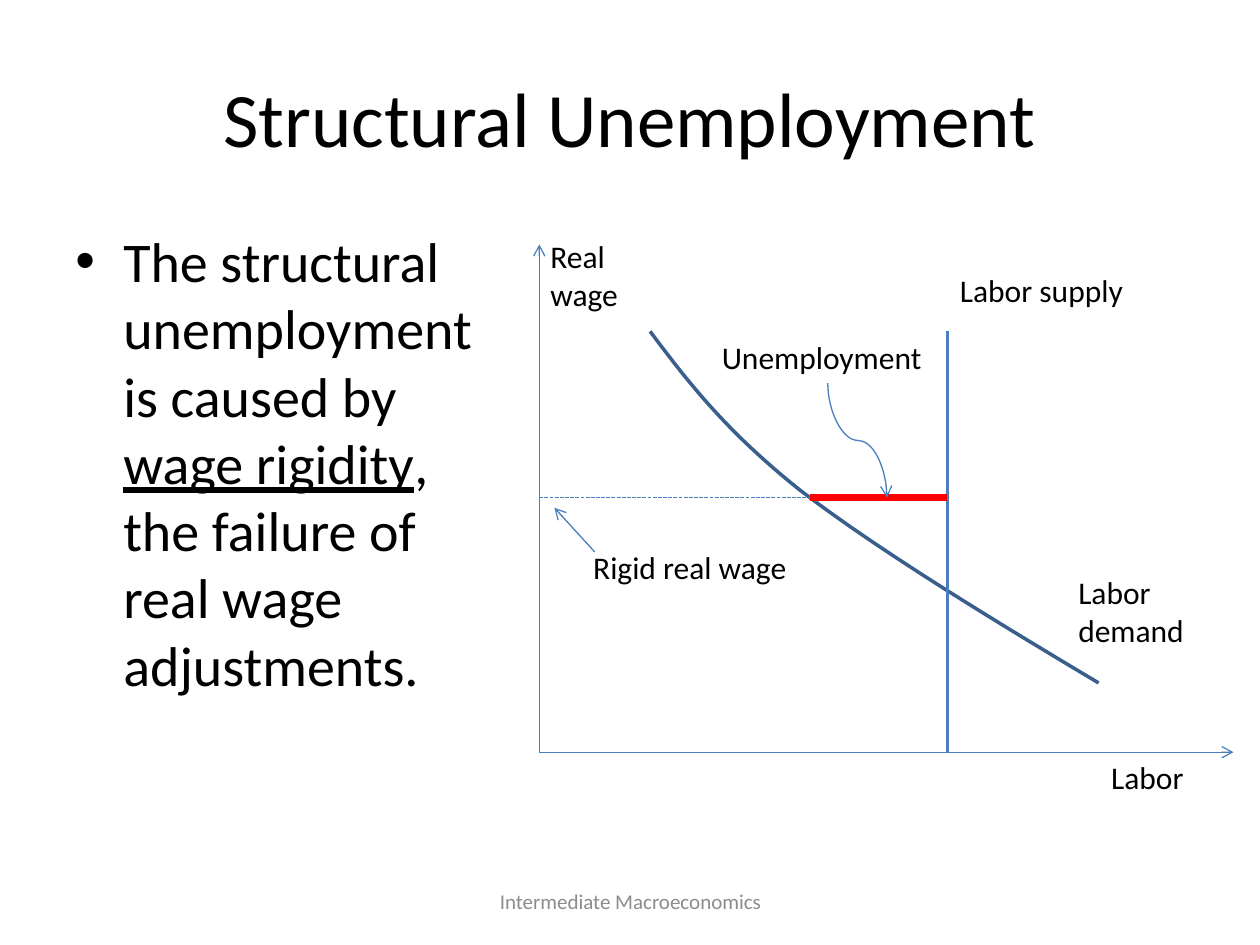
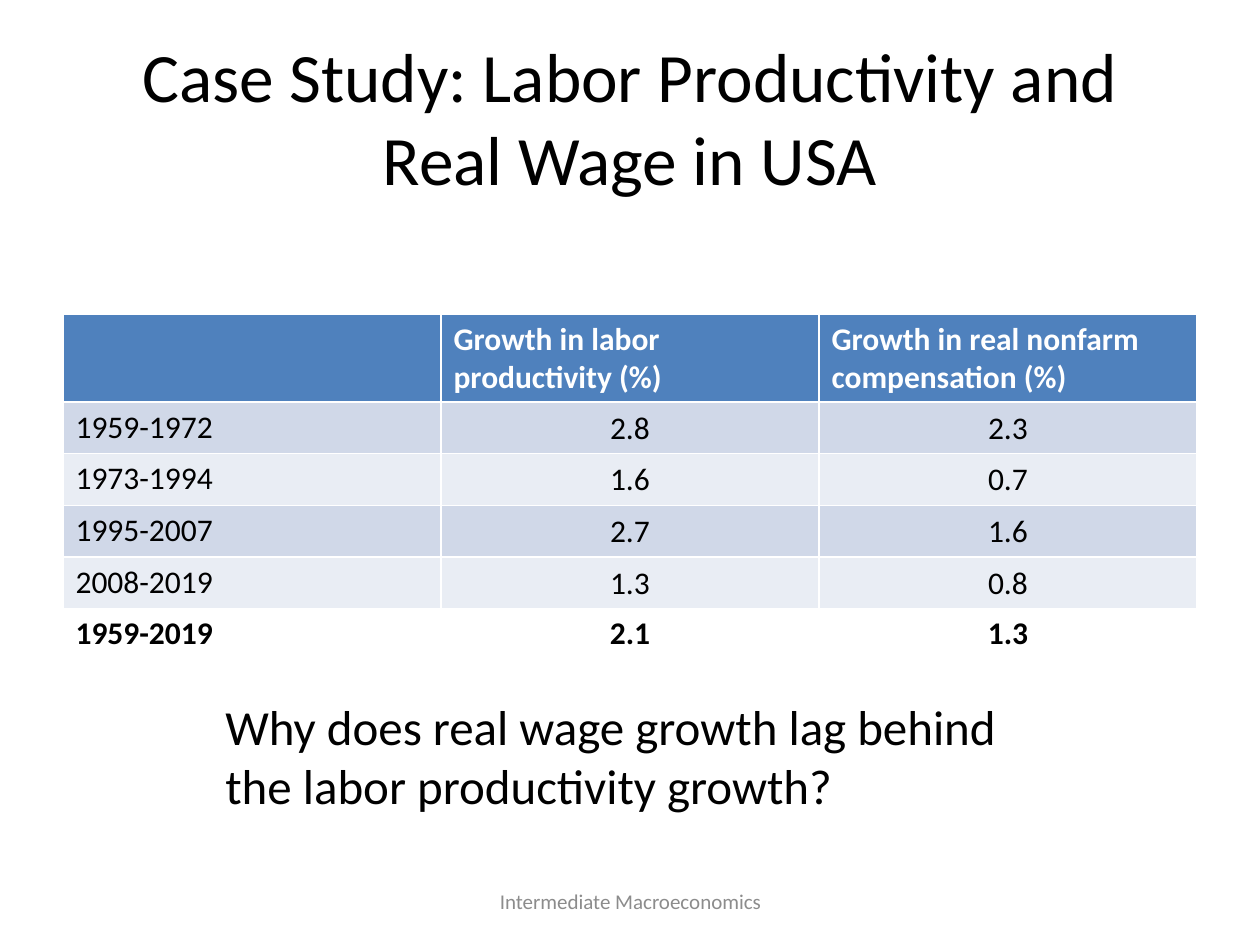
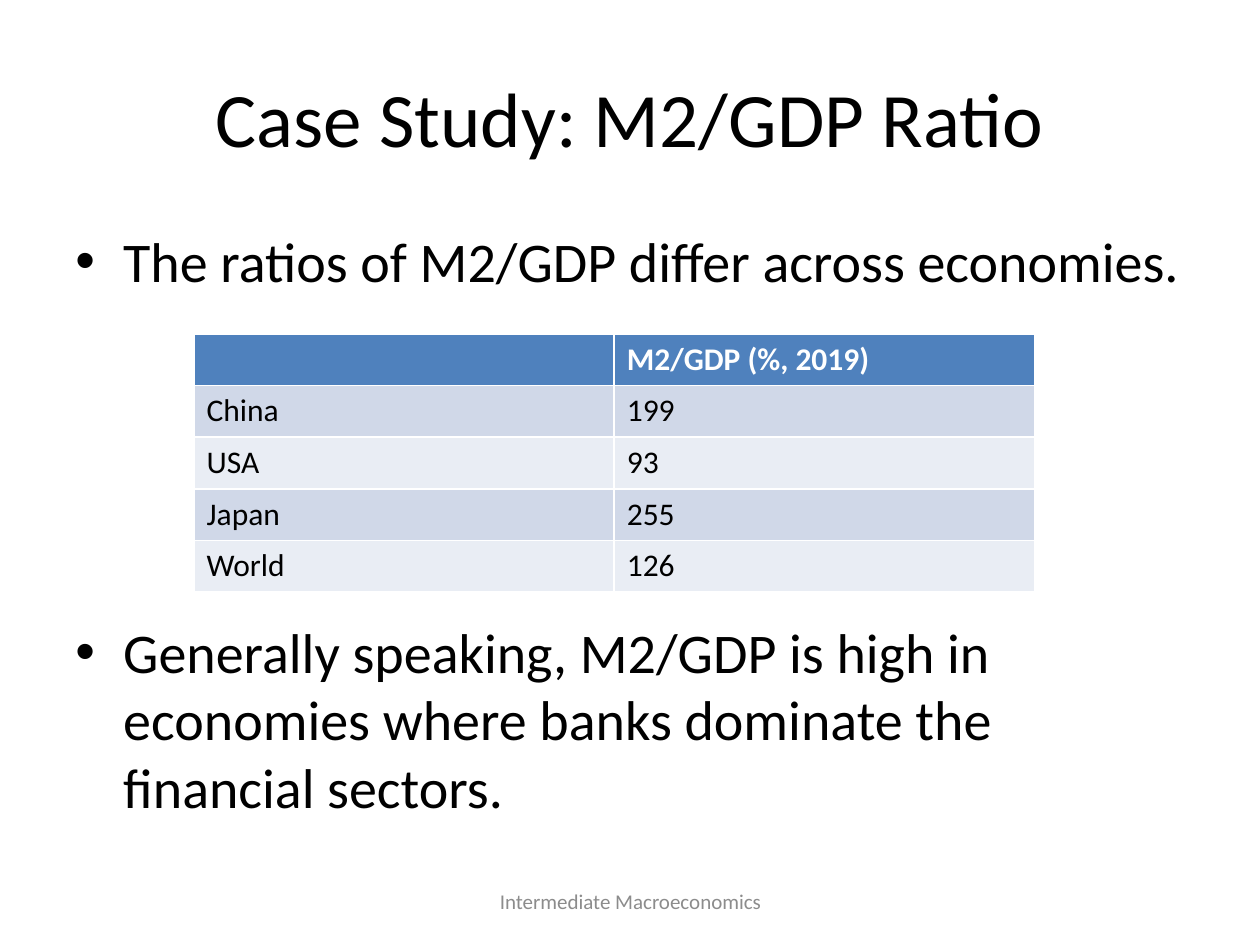
from lxml import etree
from pptx import Presentation
from pptx.dml.color import RGBColor
from pptx.enum.dml import MSO_LINE
from pptx.enum.shapes import MSO_CONNECTOR
from pptx.enum.text import MSO_ANCHOR, PP_ALIGN
from pptx.oxml.ns import qn
from pptx.util import Inches, Pt

LEFT, CENTER = PP_ALIGN.LEFT, PP_ALIGN.CENTER
TOP, MIDDLE = MSO_ANCHOR.TOP, MSO_ANCHOR.MIDDLE
STRAIGHT, CURVE = MSO_CONNECTOR.STRAIGHT, MSO_CONNECTOR.CURVE
DASH = MSO_LINE.SQUARE_DOT

FONT = "Calibri"
COLORS = {
    "ink": "000000", "white": "FFFFFF", "gray": "8C8C8C",
    "line": "4B7EBC", "curve": "3A5F8C", "red": "FF0000",
    "head": "4F81BD", "band": "D0D8E8", "pale": "E9EDF4",
}
ROW = 0.41
INDENT = 0.38


def tint(name):
    return RGBColor.from_string(COLORS[name])


def write(frame, runs, size=18, color="ink", bold=False, align=LEFT,
          bullet=False, before=0, more=False):
    """Write one paragraph; each run is a string or (string, underline)."""
    para = frame.add_paragraph() if more else frame.paragraphs[0]
    para.alignment = align
    para.space_before = Pt(before)
    if bullet:
        props = para._p.get_or_add_pPr()
        props.set("marL", str(Inches(INDENT)))
        props.set("indent", str(-Inches(INDENT)))
        etree.SubElement(props, qn("a:buFont"), typeface="Arial")
        etree.SubElement(props, qn("a:buChar"), char="•")
    for part in [runs] if isinstance(runs, str) else runs:
        text, under = (part, False) if isinstance(part, str) else part
        run = para.add_run()
        run.text = text
        font = run.font
        font.name, font.size, font.bold = FONT, Pt(size), bold
        font.color.rgb = tint(color)
        if under:
            font.underline = True


def text_box(slide, box, runs, anchor=TOP, **style):
    frame = slide.shapes.add_textbox(*map(Inches, box)).text_frame
    frame.word_wrap = True
    frame.vertical_anchor = anchor
    write(frame, runs, **style)
    return frame


def link(slide, start, end, color="line", width=0.75, kind=STRAIGHT,
         dash=None, arrow=False):
    line = slide.shapes.add_connector(kind, *map(Inches, (*start, *end)))
    line.line.color.rgb = tint(color)
    line.line.width = Pt(width)
    if dash:
        line.line.dash_style = dash
    if arrow:
        etree.SubElement(line.line._get_or_add_ln(), qn("a:tailEnd"), type="arrow")
    etree.SubElement(line._element.spPr, qn("a:effectLst"))
    return line


def bend(slide, start, end):
    """Draw an S-shaped arrow that leaves and arrives vertically."""
    mid_x, mid_y = (start[0] + end[0]) / 2, (start[1] + end[1]) / 2
    half_w, half_h = (end[1] - start[1]) / 2, (end[0] - start[0]) / 2
    line = link(slide, (mid_x + half_w, mid_y - half_h),
                (mid_x - half_w, mid_y + half_h), kind=CURVE, arrow=True)
    line._element.spPr.find(qn("a:xfrm")).set("rot", str(270 * 60000))


def bezier(nodes, steps=24):
    """Yield points along joined cubic curves."""
    yield nodes[0]
    for first in range(0, len(nodes) - 1, 3):
        quad = nodes[first:first + 4]
        for step in range(1, steps + 1):
            t = step / steps
            mix = ((1 - t) ** 3, 3 * t * (1 - t) ** 2, 3 * t * t * (1 - t), t ** 3)
            yield tuple(sum(m * node[axis] for m, node in zip(mix, quad))
                        for axis in (0, 1))


def curve(slide, nodes):
    start, *rest = [(Inches(x), Inches(y)) for x, y in bezier(nodes)]
    path = slide.shapes.build_freeform(*start)
    path.add_line_segments(rest, close=False)
    shape = path.convert_to_shape()
    shape.shadow.inherit = False
    shape.fill.background()
    shape.line.color.rgb = tint("curve")
    shape.line.width = Pt(2)


def market(slide, left, top, width, height):
    """Draw the labor market diagram, its axes filling the box."""
    def at(x, y):
        return left + x, top + y

    supply, peak, wage, cross = 3.24, 0.69, 2.01, 2.15
    link(slide, at(0, height), at(width, height), arrow=True)
    link(slide, at(0, height), at(0, 0), arrow=True)
    demand = [(0.88, peak), (1.18, 1.09), (1.48, 1.48), (2.07, 1.95),
              (2.67, 2.41), (3.55, 2.95), (4.44, 3.48)]
    curve(slide, [at(*node) for node in demand])
    link(slide, at(0, wage), at(supply, wage), dash=DASH)
    link(slide, at(supply, peak), at(supply, height), width=2)
    link(slide, at(cross, wage), at(supply, wage), color="red", width=4)
    bend(slide, at(2.29, 1.1), at(2.76, wage))
    link(slide, at(0.44, 2.44), at(0.12, 2.09), arrow=True)
    labels = [
        ("Unemployment", 1.35, peak, 1.89, 0.4),
        ("Rigid real wage", 0.33, 2.36, 2.2, 0.4),
        ("Labor demand", 4.18, 2.56, 1.33, 0.71),
        ("Labor supply", supply, 0.16, 1.61, 0.4),
        ("Labor", 4.44, height, 1.28, 0.4),
        ("Real wage", -0.01, -0.11, 1.15, 0.71),
    ]
    for text, x, y, wide, high in labels:
        text_box(slide, (*at(x, y), wide, high), text)


def grid(slide, left, top, width, rows, head=ROW, align=LEFT, total=False):
    """Draw a banded table; total makes the last row bold on white."""
    count, cols = len(rows), len(rows[0])
    high = head + ROW * (count - 1)
    box = map(Inches, (left, top, width, high))
    table = slide.shapes.add_table(count, cols, *box).table
    for r, row in enumerate(rows):
        table.rows[r].height = Inches(ROW if r else head)
        last = total and r == count - 1
        fill = ("head" if r == 0 else "white" if last
                else "band" if r % 2 else "pale")
        for c, text in enumerate(row):
            cell = table.cell(r, c)
            cell.fill.solid()
            cell.fill.fore_color.rgb = tint(fill)
            value = r > 0 and c > 0
            if value and align == CENTER and not last:
                cell.vertical_anchor = MIDDLE
                cell.margin_left = cell.margin_right = Inches(0.01)
                cell.margin_top, cell.margin_bottom = Inches(0.01), 0
            if text:
                write(cell.text_frame, text, bold=r == 0 or last,
                      color="ink" if r else "white",
                      align=align if value else LEFT)


def page(deck, title, size=44):
    """Add a slide with its title and footer."""
    slide = deck.slides.add_slide(deck.slide_layouts[6])
    text_box(slide, (0.5, 0.3, 9, 1.25), title, MIDDLE, size=size, align=CENTER)
    text_box(slide, (3.42, 6.95, 3.17, 0.4), "Intermediate Macroeconomics",
             MIDDLE, size=12, color="gray", align=CENTER)
    return slide


def body(slide, width, runs):
    return text_box(slide, (0.5, 1.75, width, 4.95), runs, size=32, bullet=True)


def structural(deck):
    slide = page(deck, "Structural Unemployment")
    body(slide, 3.48, ["The structural unemployment is caused by ",
                       ("wage rigidity", True),
                       ", the failure of real wage adjustments."])
    market(slide, 4.28, 1.94, 5.51, 4.03)


def wages(deck):
    slide = page(deck, "Case Study: Labor Productivity and Real Wage in USA", 39.6)
    rows = [
        ("", "Growth in labor productivity (%)",
         "Growth in real nonfarm compensation (%)"),
        ("1959-1972", "2.8", "2.3"),
        ("1973-1994", "1.6", "0.7"),
        ("1995-2007", "2.7", "1.6"),
        ("2008-2019", "1.3", "0.8"),
        ("1959-2019", "2.1", "1.3"),
    ]
    grid(slide, 0.5, 2.49, 9, rows, head=0.7, align=CENTER, total=True)
    text_box(slide, (1.69, 5.48, 6.38, 1.04),
             "Why does real wage growth lag behind the labor productivity growth?",
             size=28)


def money(deck):
    slide = page(deck, "Case Study: M2/GDP Ratio")
    frame = body(slide, 9, "The ratios of M2/GDP differ across economies.")
    write(frame, "Generally speaking, M2/GDP is high in economies where banks "
          "dominate the financial sectors.",
          size=32, bullet=True, before=185, more=True)
    rows = [("", "M2/GDP (%, 2019)"), ("China", "199"), ("USA", "93"),
            ("Japan", "255"), ("World", "126")]
    grid(slide, 1.54, 2.65, 6.67, rows)


def main():
    deck = Presentation()
    deck.slide_width, deck.slide_height = Inches(10), Inches(7.5)
    for build in (structural, wages, money):
        build(deck)
    deck.save("out.pptx")


if __name__ == "__main__":
    main()
